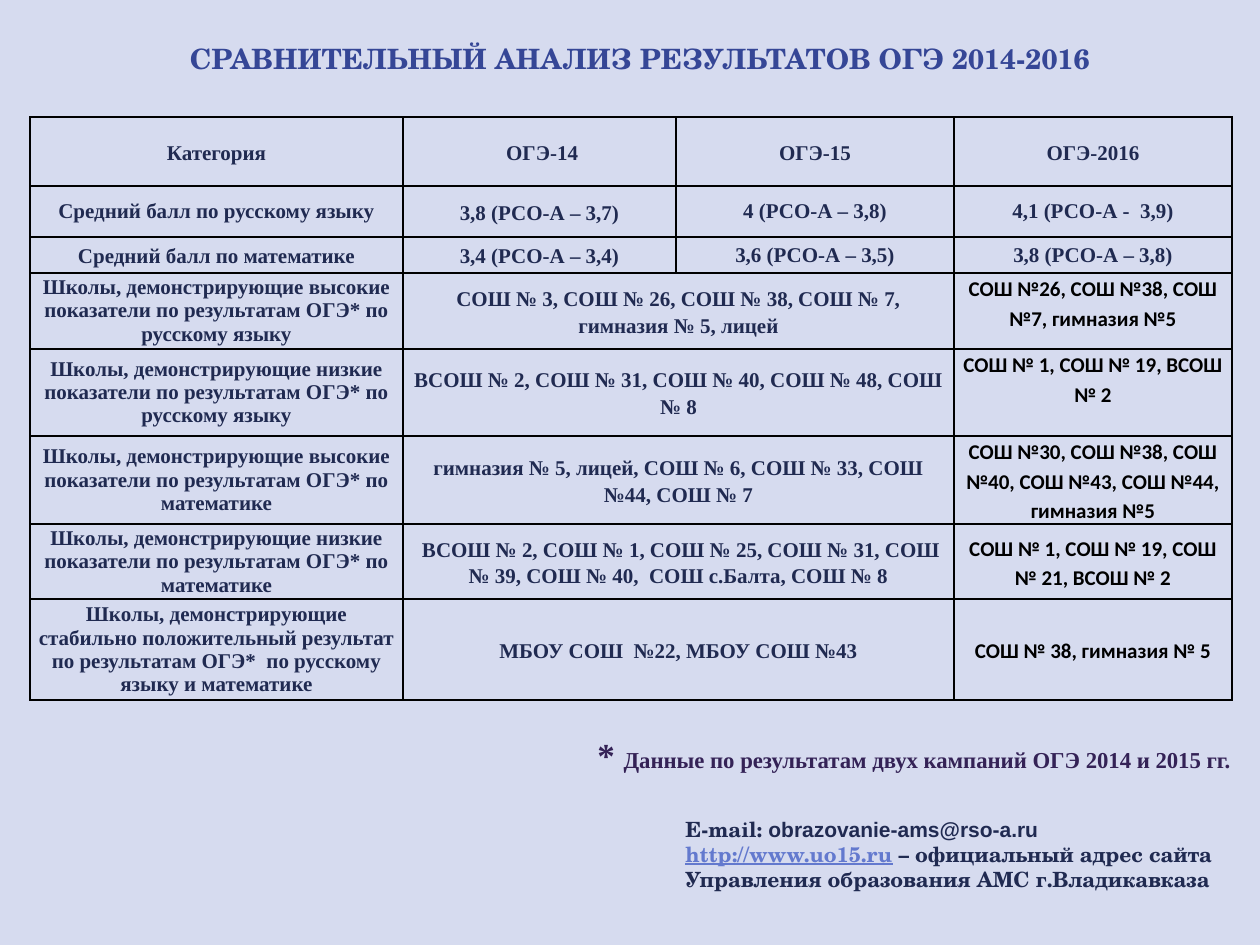
from lxml.etree import SubElement
from pptx import Presentation
from pptx.dml.color import RGBColor
from pptx.enum.text import MSO_ANCHOR, MSO_AUTO_SIZE, PP_ALIGN
from pptx.oxml.ns import qn
from pptx.util import Pt

SCALE = 914400 / 126
NAVY, BLUE, LINK, PURPLE, BLACK = "202A51", "354696", "6379CE", "342256", "000000"
SERIF, SCHOOL = "Times New Roman", "TeX Gyre Schola"


def px(*lengths):
    return [round(length * SCALE) for length in lengths]


def add_text(para, text, size=12, font=SERIF, color=NAVY, underline=None):
    span = para.add_run()
    span.text = text
    span.font.size = Pt(size)
    span.font.name = font
    span.font.bold = True
    span.font.underline = underline
    span.font.color.rgb = RGBColor.from_string(color)


deck = Presentation()
deck.slide_width, deck.slide_height = px(1260, 945)
page = deck.slides.add_slide(deck.slide_layouts[5])
page.background.fill.solid()
page.background.fill.fore_color.rgb = RGBColor.from_string("D6DBEF")

title = page.shapes.title
title.left, title.top, title.width, title.height = px(35, 35, 1210, 81)
title.text_frame.word_wrap = True
title.text_frame.auto_size = MSO_AUTO_SIZE.NONE
title.text_frame.vertical_anchor = MSO_ANCHOR.TOP
para = title.text_frame.paragraphs[0]
para.alignment = PP_ALIGN.CENTER
add_text(para, "СРАВНИТЕЛЬНЫЙ АНАЛИЗ РЕЗУЛЬТАТОВ ОГЭ 2014-2016", size=16, font=SCHOOL, color=BLUE)

schools = "Школы, демонстрирующие {} показатели по результатам ОГЭ* по {}"
rows = [
    ["Категория", " ОГЭ-14", "ОГЭ-15", "ОГЭ-2016"],
    ["Средний балл по русскому языку", "3,8 (РСО-А – 3,7)", "4 (РСО-А – 3,8)", "4,1 (РСО-А -  3,9)"],
    ["Средний балл по математике", "3,4 (РСО-А – 3,4)", "3,6 (РСО-А – 3,5)", "3,8 (РСО-А – 3,8)"],
    [schools.format("высокие", "русскому языку"),
     "СОШ № 3, СОШ № 26, СОШ № 38, СОШ № 7, гимназия № 5, лицей", None,
     "СОШ №26, СОШ №38, СОШ №7, гимназия №5"],
    [schools.format("низкие", "русскому языку"),
     "ВСОШ № 2, СОШ № 31, СОШ № 40, СОШ № 48, СОШ № 8", None,
     "СОШ № 1, СОШ № 19, ВСОШ № 2"],
    [schools.format("высокие", "математике"),
     "гимназия № 5, лицей, СОШ № 6, СОШ № 33, СОШ №44, СОШ № 7", None,
     "СОШ №30, СОШ №38, СОШ №40, СОШ №43, СОШ №44, гимназия №5"],
    [schools.format("низкие", "математике"),
     " ВСОШ № 2, СОШ № 1, СОШ № 25, СОШ № 31, СОШ № 39, СОШ № 40,  СОШ с.Балта, СОШ № 8", None,
     "СОШ № 1, СОШ № 19, СОШ № 21, ВСОШ № 2"],
    ["Школы, демонстрирующие стабильно положительный результат\n"
     "по результатам ОГЭ*  по русскому языку и математике",
     "МБОУ СОШ  №22, МБОУ СОШ №43", None, "СОШ № 38, гимназия № 5"],
]
widths = px(373, 273, 278, 278)
heights = px(69, 51, 36, 76, 87, 87, 75, 101)
table = page.shapes.add_table(len(rows), len(widths), *px(30, 117, 1202, 582)).table
table.first_row = table.horz_banding = False
for column, width in zip(table.columns, widths):
    column.width = width
for table_row, height in zip(table.rows, heights):
    table_row.height = height

for row, texts in enumerate(rows):
    if texts[2] is None:
        table.cell(row, 1).merge(table.cell(row, 2))
    for col, text in enumerate(texts):
        cell = table.cell(row, col)
        cell.margin_left, cell.margin_right, cell.margin_top, cell.margin_bottom = px(8, 8, 0, 0)
        top_aligned = col == 3 and row in (3, 4)
        cell.vertical_anchor = MSO_ANCHOR.TOP if top_aligned else MSO_ANCHOR.MIDDLE
        properties = cell._tc.get_or_add_tcPr()
        for side in ("a:lnL", "a:lnR", "a:lnT", "a:lnB"):
            line = SubElement(properties, qn(side), w=str(Pt(1)))
            fill = SubElement(line, qn("a:solidFill"))
            SubElement(fill, qn("a:srgbClr"), val=BLACK)
        cell.fill.background()
        if text is None:
            continue
        single = (col == 0 and row not in (0, 2)) or (col >= 2 and row in (1, 2))
        latest = col == 3 and row >= 3
        for index, line_text in enumerate(text.split("\n")):
            para = cell.text_frame.add_paragraph() if index else cell.text_frame.paragraphs[0]
            para.alignment = PP_ALIGN.CENTER
            para.line_spacing = 1.0 if single else 1.15
            add_text(para, line_text, font="Calibri" if latest else SERIF, color=BLACK if latest else NAVY)

contacts = page.shapes.add_textbox(*px(673, 810, 587, 89)).text_frame
contacts.word_wrap = True
para = contacts.paragraphs[0]
add_text(para, "E-mail: ", font=SCHOOL)
add_text(para, "obrazovanie-ams@rso-a.ru", font="Arial")
para = contacts.add_paragraph()
add_text(para, "http://www.uo15.ru", font=SCHOOL, color=LINK, underline=True)
add_text(para, " – официальный адрес сайта Управления образования АМС г.Владикавказа", font=SCHOOL)

footnote = page.shapes.add_textbox(*px(585, 727, 675, 55)).text_frame
footnote.word_wrap = True
para = footnote.paragraphs[0]
add_text(para, "*", size=20, color=PURPLE)
add_text(para, " ", size=18, font="Arial", color=PURPLE)
add_text(para, "Данные по результатам двух кампаний ОГЭ 2014 и 2015 гг.", size=13, color=PURPLE)

deck.save("out.pptx")
